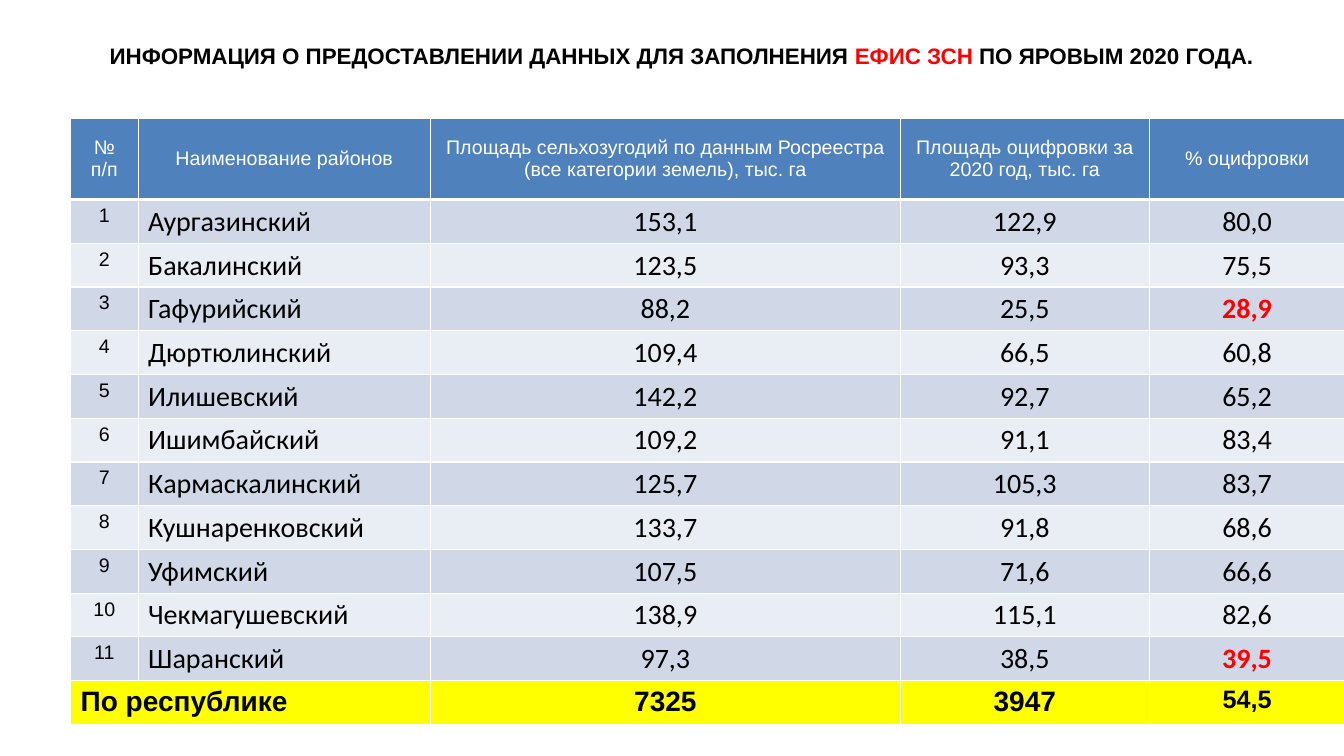
from lxml import etree
from pptx import Presentation
from pptx.dml.color import RGBColor
from pptx.enum import text
from pptx.oxml.ns import qn
from pptx.util import Inches, Pt

TITLE = [
    ("ИНФОРМАЦИЯ О ПРЕДОСТАВЛЕНИИ ДАННЫХ ДЛЯ ЗАПОЛНЕНИЯ ", "ink"),
    ("ЕФИС ЗСН ", "alert"),
    ("ПО ЯРОВЫМ 2020 ГОДА.", "ink"),
]
HEADINGS = (
    "№ п/п",
    "Наименование районов",
    "Площадь сельхозугодий по данным Росреестра (все категории земель), тыс. га",
    "Площадь оцифровки за 2020 год, тыс. га",
    "% оцифровки",
)
DISTRICTS = [
    ("Аургазинский", "153,1", "122,9", "80,0"),
    ("Бакалинский", "123,5", "93,3", "75,5"),
    ("Гафурийский", "88,2", "25,5", "28,9"),
    ("Дюртюлинский", "109,4", "66,5", "60,8"),
    ("Илишевский", "142,2", "92,7", "65,2"),
    ("Ишимбайский", "109,2", "91,1", "83,4"),
    ("Кармаскалинский", "125,7", "105,3", "83,7"),
    ("Кушнаренковский", "133,7", "91,8", "68,6"),
    ("Уфимский", "107,5", "71,6", "66,6"),
    ("Чекмагушевский", "138,9", "115,1", "82,6"),
    ("Шаранский", "97,3", "38,5", "39,5"),
]
TOTAL = ("По республике", "", "7325", "3947", "54,5")
LAGGING = {"28,9", "39,5"}

COLUMN_WIDTHS = (0.67, 2.9, 4.66, 2.47, 1.94)
HEADER_HEIGHT, ROW_HEIGHT = 0.81, 0.41

THEME = {
    "ink": "000000", "alert": "FF0000", "paper": "FFFFFF",
    "header": "4F81BD", "bands": ("D0D8E8", "E9EDF4"), "total": "FFFF00",
    "label_font": "Arial", "body_font": "Calibri",
    "title_size": 16, "label_size": 14, "body_size": 20, "percent_size": 18,
    "rule": 1, "header_rule": 3,
}


def color(value):
    return RGBColor.from_string(value)


def set_font(para, name, size, ink, bold=False):
    font = para.font
    font.name, font.size, font.bold = name, Pt(size), bold
    font.color.rgb = color(ink)


def add_borders(cell, top, bottom):
    """Draw white rules on all four sides; top and bottom are point widths."""
    properties = cell._tc.get_or_add_tcPr()
    sides = {"lnL": THEME["rule"], "lnR": THEME["rule"], "lnT": top, "lnB": bottom}
    for side, width in sides.items():
        line = etree.SubElement(properties, qn(f"a:{side}"), w=str(Pt(width)))
        fill = etree.SubElement(line, qn("a:solidFill"))
        etree.SubElement(fill, qn("a:srgbClr"), val=THEME["paper"])


def add_title(page):
    box = page.shapes.add_textbox(Inches(0.56), Inches(0.2), Inches(12.4), Inches(0.71))
    frame = box.text_frame
    frame.word_wrap = True
    frame.vertical_anchor = text.MSO_ANCHOR.MIDDLE
    frame.margin_left = frame.margin_right = Inches(0.12)
    frame.margin_top = frame.margin_bottom = Inches(0.06)
    para = frame.paragraphs[0]
    para.alignment = text.PP_ALIGN.CENTER
    set_font(para, THEME["label_font"], THEME["title_size"], THEME["ink"], bold=True)
    for words, ink in TITLE:
        span = para.add_run()
        span.text = words
        span.font.color.rgb = color(THEME[ink])


def cell_style(row, column, value, last):
    """Return fill, font name, size, ink and bold for one cell."""
    label, body = THEME["label_font"], THEME["body_font"]
    if row == 0:
        return THEME["header"], label, THEME["label_size"], THEME["paper"], False
    if row == last:
        size = THEME["percent_size" if column == 4 else "body_size"]
        return THEME["total"], label, size, THEME["ink"], True
    band = THEME["bands"][(row - 1) % 2]
    if column == 0:
        return band, label, THEME["label_size"], THEME["ink"], False
    lagging = column == 4 and value in LAGGING
    ink = THEME["alert" if lagging else "ink"]
    return band, body, THEME["body_size"], ink, lagging


def add_district_table(page):
    numbered = [(str(n), *district) for n, district in enumerate(DISTRICTS, 1)]
    rows = [HEADINGS, *numbered, TOTAL]
    last = len(rows) - 1
    heights = [HEADER_HEIGHT] + [ROW_HEIGHT] * last
    table = page.shapes.add_table(
        len(rows), len(HEADINGS), Inches(0.7), Inches(1.17),
        Inches(sum(COLUMN_WIDTHS)), Inches(sum(heights))).table
    for column, width in zip(table.columns, COLUMN_WIDTHS):
        column.width = Inches(width)
    for table_row, height in zip(table.rows, heights):
        table_row.height = Inches(height)
    table.cell(last, 0).merge(table.cell(last, 1))

    for r, values in enumerate(rows):
        for c, value in enumerate(values):
            cell = table.cell(r, c)
            fill, name, size, ink, bold = cell_style(r, c, value, last)
            add_borders(cell,
                        top=THEME["header_rule" if r == 1 else "rule"],
                        bottom=THEME["header_rule" if r == 0 else "rule"])
            cell.fill.solid()
            cell.fill.fore_color.rgb = color(fill)
            if r == 0:
                cell.vertical_anchor = text.MSO_ANCHOR.MIDDLE
            cell.text = value
            para = cell.text_frame.paragraphs[0]
            is_name = (c == 1 and r > 0) or (c == 0 and r == last)
            para.alignment = text.PP_ALIGN.LEFT if is_name else text.PP_ALIGN.CENTER
            set_font(para, name, size, ink, bold)


def main():
    deck = Presentation()
    deck.slide_width, deck.slide_height = Inches(13.33), Inches(7.5)
    page = deck.slides.add_slide(deck.slide_layouts[6])
    add_title(page)
    add_district_table(page)
    deck.save("out.pptx")


if __name__ == "__main__":
    main()
